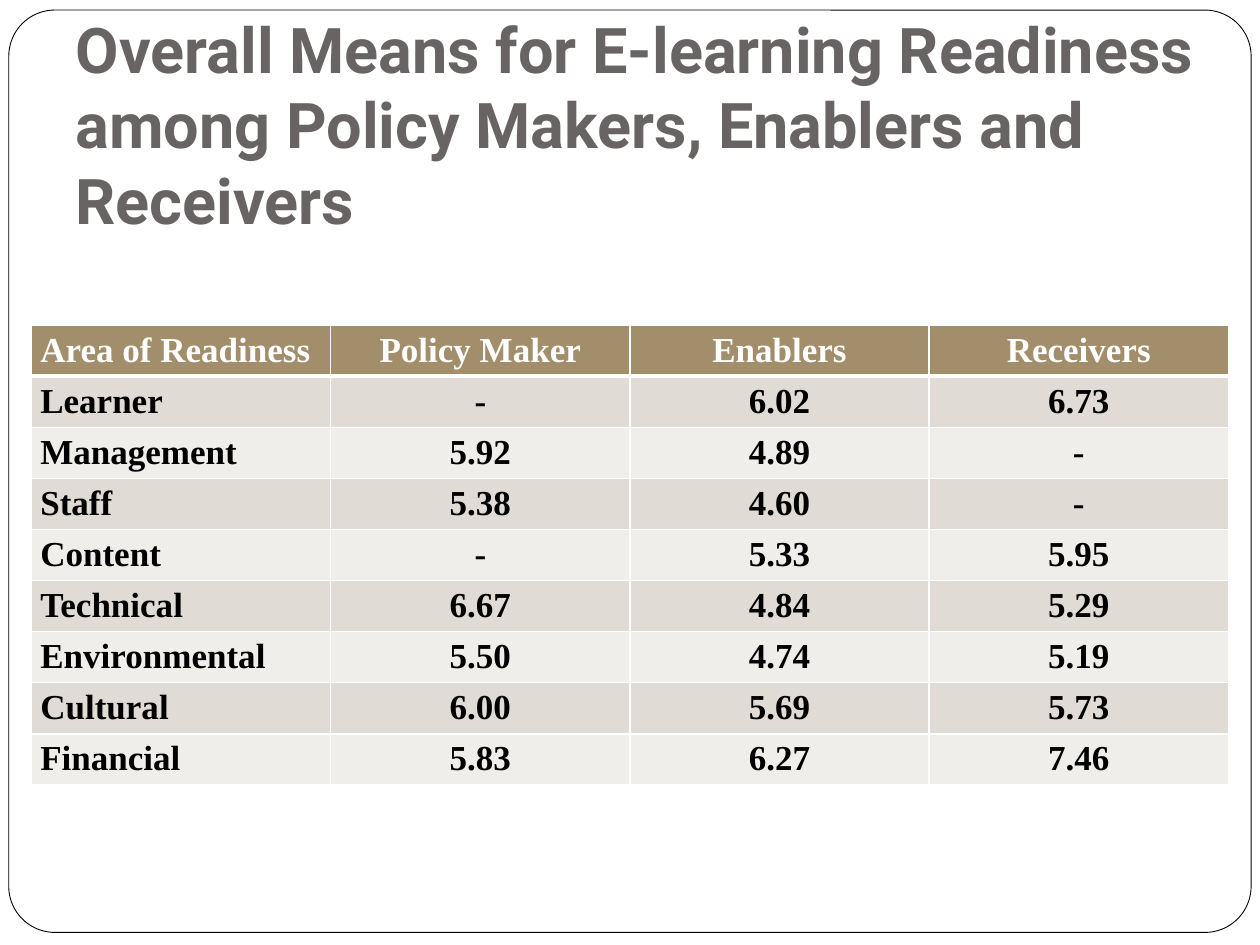
from dataclasses import dataclass

from lxml import etree
from pptx import Presentation
from pptx.dml.color import RGBColor
from pptx.enum import shapes, text
from pptx.oxml.ns import qn
from pptx.util import Inches, Pt

COLORS = {
    "white": "FFFFFF",
    "black": "000000",
    "title": "696464",
    "header": "A28E6A",
    "odd": "E0DBD4",
    "even": "F0EEEB",
}


@dataclass
class Readiness:
    area: str
    policy_maker: str
    enablers: str
    receivers: str

    def values(self) -> list[str]:
        return [self.area, self.policy_maker, self.enablers, self.receivers]


ROWS = [
    Readiness("Area of Readiness", "Policy Maker", "Enablers", "Receivers"),
    Readiness("Learner", "-", "6.02", "6.73"),
    Readiness("Management", "5.92", "4.89", "-"),
    Readiness("Staff", "5.38", "4.60", "-"),
    Readiness("Content", "-", "5.33", "5.95"),
    Readiness("Technical", "6.67", "4.84", "5.29"),
    Readiness("Environmental", "5.50", "4.74", "5.19"),
    Readiness("Cultural", "6.00", "5.69", "5.73"),
    Readiness("Financial", "5.83", "6.27", "7.46"),
]


def rgb(name: str) -> RGBColor:
    return RGBColor.from_string(COLORS[name])


def write(tf, content: str, *, font: str, size: float, color: str,
          align=text.PP_ALIGN.LEFT, spacing: float = 1.0) -> None:
    p = tf.paragraphs[0]
    p.alignment = align
    p.line_spacing = spacing
    r = p.add_run()
    r.text = content
    r.font.name = font
    r.font.size = Pt(size)
    r.font.bold = True
    r.font.color.rgb = rgb(color)


def set_borders(cell, top: float, bottom: float) -> None:
    tc_pr = cell._tc.get_or_add_tcPr()
    widths = {"lnL": 1, "lnR": 1, "lnT": top, "lnB": bottom}
    for i, (side, width) in enumerate(widths.items()):
        ln = etree.Element(qn(f"a:{side}"), w=str(Pt(width)))
        fill = etree.SubElement(ln, qn("a:solidFill"))
        etree.SubElement(fill, qn("a:srgbClr"), val=COLORS["white"])
        tc_pr.insert(i, ln)


def add_frame(s):
    sp = s.shapes.add_shape(shapes.MSO_SHAPE.ROUNDED_RECTANGLE,
                            Inches(0.07), Inches(0.08), Inches(9.86), Inches(7.32))
    sp.adjustments[0] = 0.05
    sp.shadow.inherit = False
    sp.fill.solid()
    sp.fill.fore_color.rgb = rgb("white")
    sp.line.color.rgb = rgb("black")
    sp.line.width = Pt(0.5)
    return sp


def format_title(title) -> None:
    title.left, title.top = Inches(0.5), Inches(1.33)
    title.width, title.height = Inches(9.17), Inches(1.25)
    tf = title.text_frame
    tf.word_wrap = True
    tf.auto_size = text.MSO_AUTO_SIZE.NONE
    tf.vertical_anchor = text.MSO_ANCHOR.BOTTOM
    tf.margin_left = tf.margin_right = Inches(0.1)
    tf.margin_top, tf.margin_bottom = Inches(0.05), Inches(0.7)
    write(tf, "Overall Means for E-learning Readiness among Policy Makers, "
              "Enablers and Receivers", font="Roboto", size=36, color="title")


def add_readiness_table(s, rows: list[Readiness]) -> None:
    table = s.shapes.add_table(len(rows), 4, Inches(0.25), Inches(2.58),
                               Inches(9.5), Inches(3.65)).table
    for i, row in enumerate(rows):
        header = i == 0
        fill = "header" if header else "odd" if i % 2 else "even"
        for j, value in enumerate(row.values()):
            cell = table.cell(i, j)
            cell.margin_left = cell.margin_right = Inches(0.07)
            cell.margin_top = cell.margin_bottom = 0
            cell.fill.solid()
            cell.fill.fore_color.rgb = rgb(fill)
            set_borders(cell, top=3 if i == 1 else 1, bottom=3 if header else 1)
            write(cell.text_frame, value, font="Times New Roman", size=20,
                  color="white" if header else "black", spacing=1.15,
                  align=text.PP_ALIGN.CENTER if j else text.PP_ALIGN.LEFT)


def main() -> None:
    prs = Presentation()
    prs.slide_width, prs.slide_height = Inches(10), Inches(7.5)
    s = prs.slides.add_slide(prs.slide_layouts[5])
    title = s.shapes.title
    title.element.addprevious(add_frame(s).element)
    format_title(title)
    add_readiness_table(s, ROWS)
    prs.save("out.pptx")


if __name__ == "__main__":
    main()
